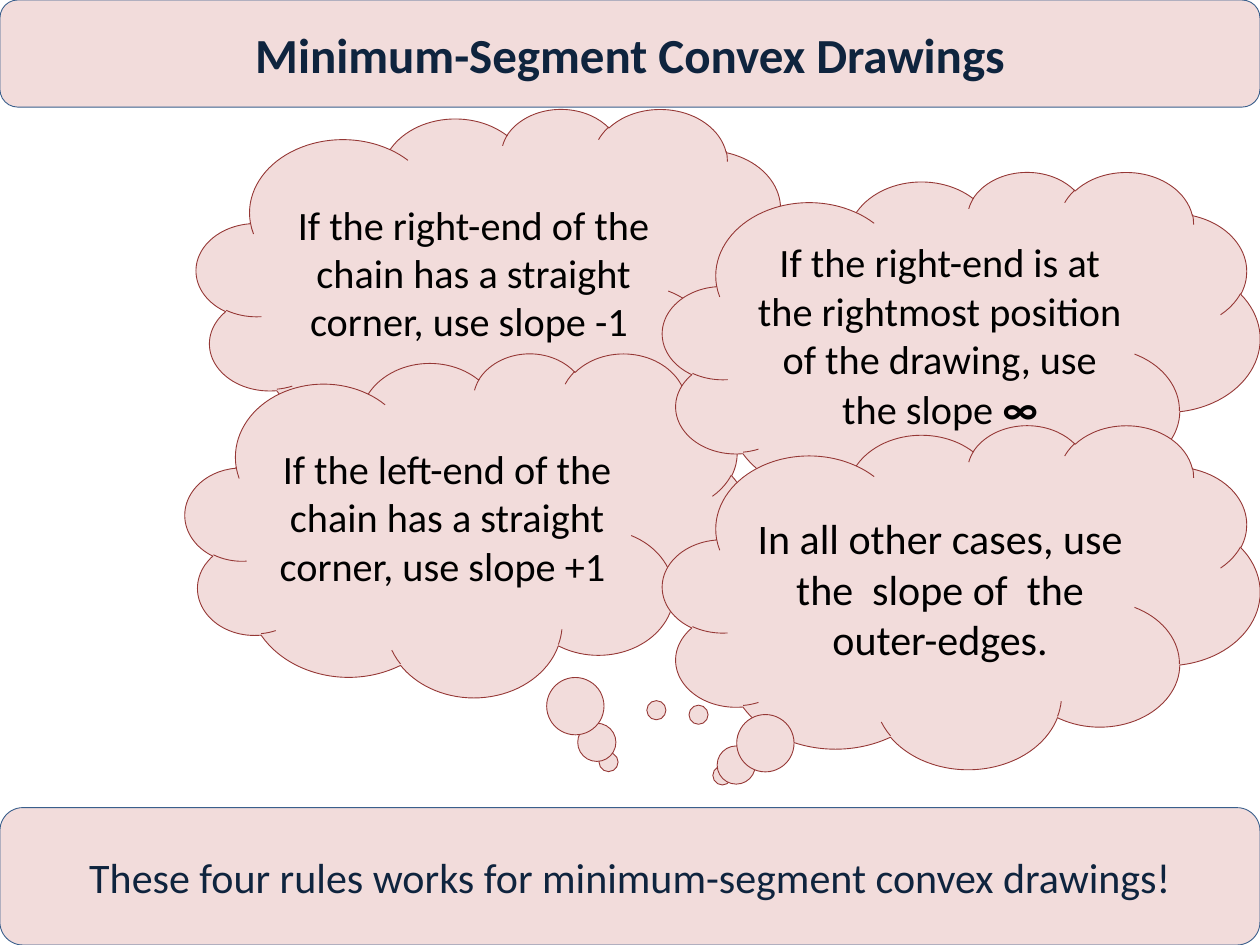
from dataclasses import dataclass

from pptx import Presentation
from pptx import util as u
from pptx.dml.color import RGBColor
from pptx.enum import shapes, text


@dataclass(frozen=True)
class Theme:
    font: str = "Calibri"
    fill: str = "F2DCDB"
    cloud_line: str = "953735"
    banner_line: str = "3A5F8C"
    cloud_text: str = "000000"
    banner_text: str = "0F243E"
    line_width: float = 0.5
    title_size: int = 28
    large_size: int = 24
    rule_size: int = 23


class SlideBuilder:
    """Places elements on one slide; lengths are shares of the slide's size."""

    def __init__(self, deck, theme):
        self.deck, self.theme = deck, theme
        self.slide = deck.slides.add_slide(deck.slide_layouts[6])

    def panel(self, preset, box, line, color, runs):
        width, height = self.deck.slide_width, self.deck.slide_height
        scales = (width, height, width, height)
        place = [round(share * scale) for share, scale in zip(box, scales)]
        panel = self.slide.shapes.add_shape(preset, *place)
        panel.shadow.inherit = False
        panel.fill.solid()
        panel.fill.fore_color.rgb = RGBColor.from_string(self.theme.fill)
        panel.line.color.rgb = RGBColor.from_string(line)
        panel.line.width = u.Pt(self.theme.line_width)

        frame = panel.text_frame
        frame.word_wrap = True
        frame.vertical_anchor = text.MSO_ANCHOR.MIDDLE
        paragraph = frame.paragraphs[0]
        paragraph.alignment = text.PP_ALIGN.CENTER
        for words, size, bold in runs:
            run = paragraph.add_run()
            run.text = words
            run.font.color.rgb = RGBColor.from_string(color)
            style = {"name": self.theme.font, "size": u.Pt(size), "bold": bold}
            for key, value in style.items():
                setattr(run.font, key, value)
        return panel

    def banner(self, top, height, *runs):
        self.panel(shapes.MSO_SHAPE.ROUNDED_RECTANGLE, (0, top, 1, height),
                   self.theme.banner_line, self.theme.banner_text, runs)

    def cloud(self, box, tail, *runs):
        cloud = self.panel(shapes.MSO_SHAPE.CLOUD_CALLOUT, box,
                           self.theme.cloud_line, self.theme.cloud_text, runs)
        for index, offset in enumerate(tail):
            cloud.adjustments[index] = offset


def main():
    deck = Presentation()
    deck.slide_width, deck.slide_height = u.Inches(10), u.Inches(7.5)
    theme = Theme()
    builder = SlideBuilder(deck, theme)

    # Rules in thought clouds: box, tail offset, text runs
    cloud_width, cloud_height = 0.474, 2.73 / 7.5
    right_column = 1 - cloud_width
    rule, large = theme.rule_size, theme.large_size
    rules = [
        ((0.156, 0.86 / 7.5, cloud_width), (0.27, 1.25),
         [("If the right-end of the chain has a straight corner, "
           "use slope -1 ", rule, False)]),
        ((0.147, 2.8 / 7.5, 0.448), (0.25, 0.69),
         [("If the left-end of the chain has a straight corner, "
           "use slope +1 ", rule, False)]),
        ((right_column, 1.36 / 7.5, cloud_width), (-0.44, 1.08),
         [("If the right-end is at the rightmost position of the drawing, "
           "use the slope ", rule, False), ("∞", large, True)]),
        ((right_column, 3.37 / 7.5, cloud_width), (-0.4, 0.52),
         [("In all other cases, use the  slope of  the outer-edges.",
           large, False)]),
    ]
    for box, tail, runs in rules:
        builder.cloud((*box, cloud_height), tail, *runs)

    # Conclusion and title banners
    conclusion_height = 1.09 / 7.5
    builder.banner(1 - conclusion_height, conclusion_height,
                   ("These four rules works for minimum-segment convex "
                    "drawings!", large, False))
    builder.banner(0, 0.85 / 7.5,
                   ("Minimum-Segment Convex Drawings", theme.title_size, True))

    deck.save("out.pptx")


if __name__ == "__main__":
    main()
